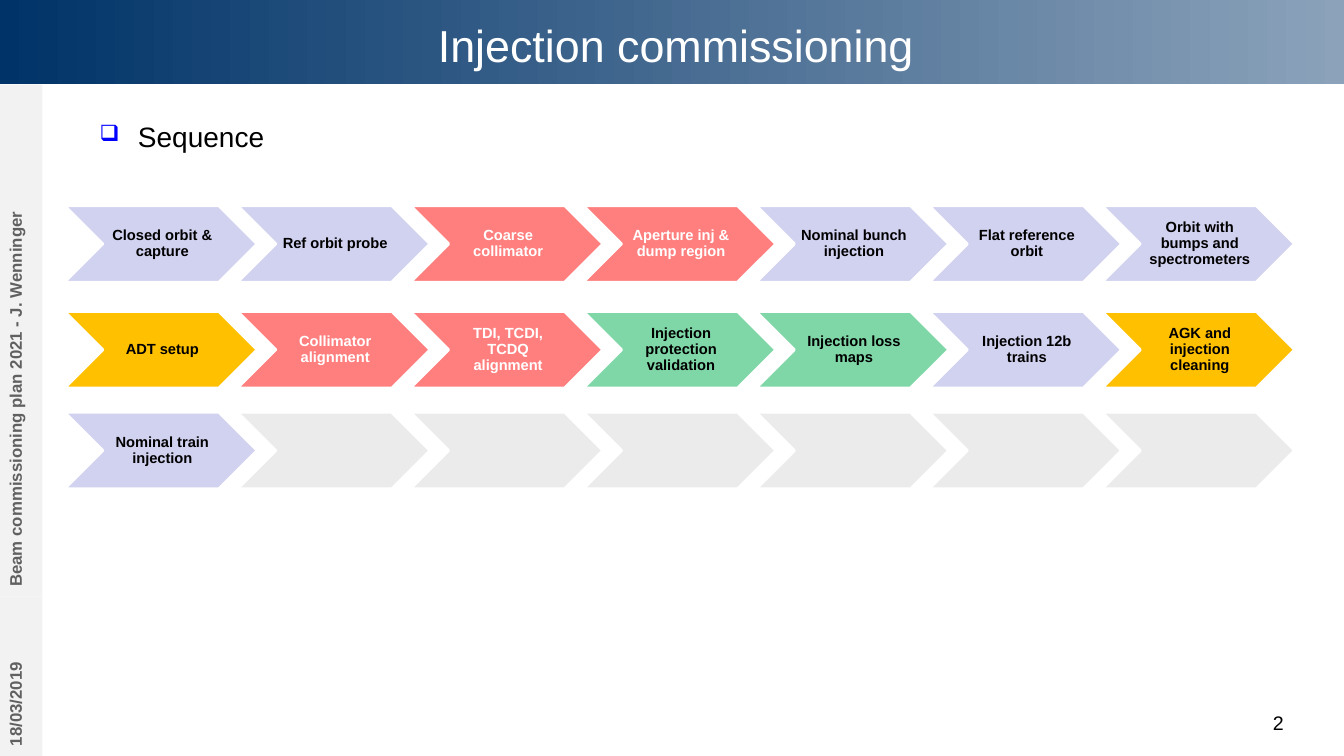
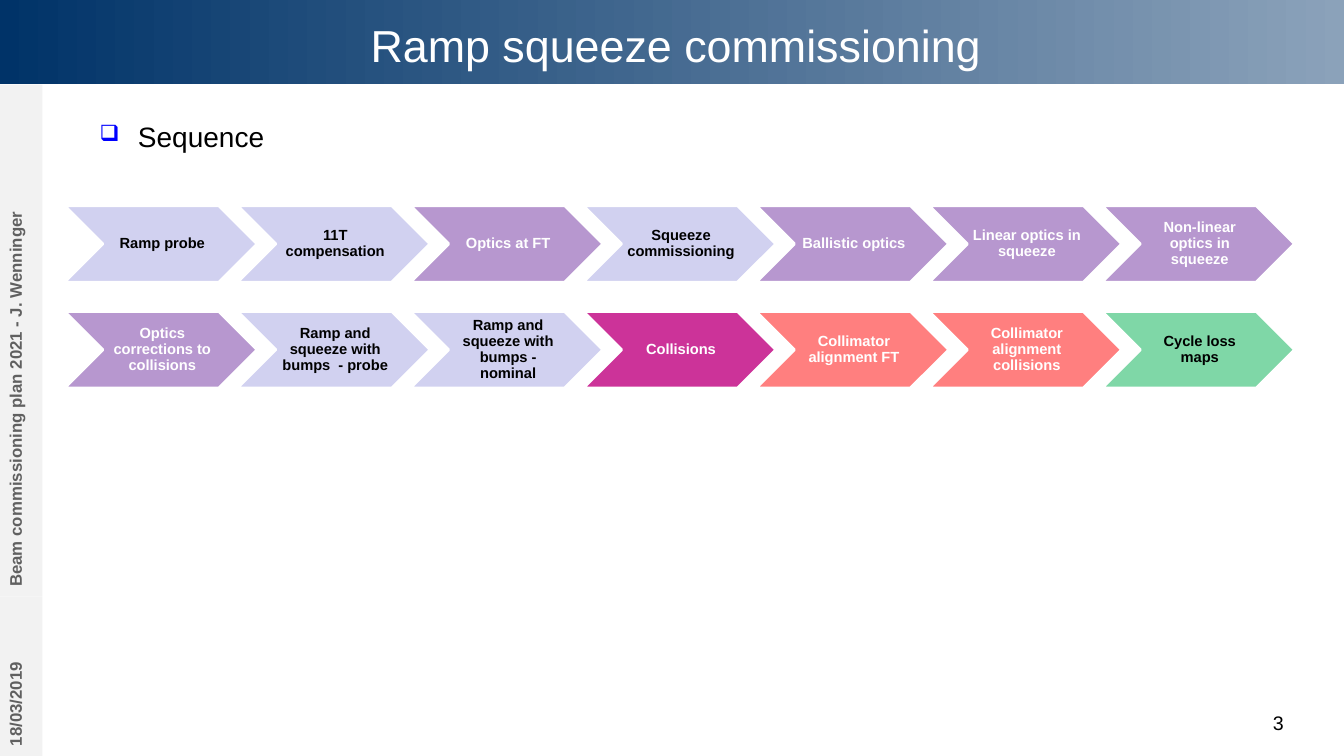
"""Build the two commissioning sequence slides."""
from lxml import etree
from pptx import Presentation
from pptx import util as u
from pptx.dml.color import RGBColor
from pptx.enum import shapes, text
from pptx.oxml.ns import qn

INK = {
    "navy": "003368", "steel": "8BA2BA", "side": "F2F2F2", "foot": "606060",
    "white": "FFFFFF", "black": "000000", "blue": "0000FF",
    "lilac": "D1D1F0", "amber": "FFC000", "pink": "CC3399",
    "red": "FF0000", "green": "00B050", "purple": "7030A0", "grey": "D9D9D9",
}
FADED = {"red", "green", "purple", "grey"}
LIGHT = {"red", "purple", "pink"}
FOOTS = [
    ("18/03/2019", 1.58, 6.71),
    ("Beam commissioning plan 2021 - J. Wenninger", 5.08, 3.38),
]
LEFT, STEP = 0.64, (10.93 - 0.64) / 6
TOPS = [2.04, 3.09, 4.09]
DECK = [
    ("Injection commissioning", [
        [("Closed orbit & capture", "lilac"), ("Ref orbit probe", "lilac"),
         ("Coarse collimator", "red"), ("Aperture inj & dump region", "red"),
         ("Nominal bunch injection", "lilac"),
         ("Flat reference orbit", "lilac"),
         ("Orbit with bumps and spectrometers", "lilac")],
        [("ADT setup", "amber"), ("Collimator alignment", "red"),
         ("TDI, TCDI, TCDQ alignment", "red"),
         ("Injection protection validation", "green"),
         ("Injection loss maps", "green"), ("Injection 12b trains", "lilac"),
         ("AGK and injection cleaning", "amber")],
        [("Nominal train injection", "lilac")] + [("", "grey")] * 6,
    ]),
    ("Ramp squeeze commissioning", [
        [("Ramp probe", "lilac"), ("11T compensation", "lilac"),
         ("Optics at FT", "purple"), ("Squeeze commissioning", "lilac"),
         ("Ballistic optics", "purple"),
         ("Linear optics in squeeze", "purple"),
         ("Non-linear optics in squeeze", "purple")],
        [("Optics corrections to collisions", "purple"),
         ("Ramp and squeeze with bumps  - probe", "lilac"),
         ("Ramp and squeeze with bumps - nominal", "lilac"),
         ("Collisions", "pink"), ("Collimator alignment FT", "red"),
         ("Collimator alignment collisions", "red"),
         ("Cycle loss maps", "green")],
    ]),
]


def write(shape, words, size, ink, align="LEFT", anchor="TOP", bold=False):
    frame = shape.text_frame
    frame.word_wrap = True
    frame.vertical_anchor = getattr(text.MSO_ANCHOR, anchor)
    para = frame.paragraphs[0]
    para.alignment = getattr(text.PP_ALIGN, align)
    run = para.add_run()
    run.text = words
    run.font.name = "Arial"
    run.font.size = u.Pt(size)
    run.font.bold = bold
    run.font.color.rgb = RGBColor.from_string(INK[ink])
    return para


def draw(slide, kind, box, ink):
    shape = slide.shapes.add_shape(kind, *map(u.Inches, box))
    shape.shadow.inherit = False
    shape.line.fill.background()
    shape.fill.solid()
    shape.fill.fore_color.rgb = RGBColor.from_string(INK[ink])
    if ink in FADED:
        clr = shape._element.spPr.find(qn("a:solidFill"))[0]
        etree.SubElement(clr, qn("a:alpha"), val="50000")
    return shape


deck = Presentation()
deck.slide_width = u.Inches(13.33)
deck.slide_height = u.Inches(7.5)

for page, (title, rows) in enumerate(DECK, 2):
    slide = deck.slides.add_slide(deck.slide_layouts[6])

    band = draw(slide, shapes.MSO_SHAPE.RECTANGLE, (0, 0, 13.33, 0.83), "navy")
    band.fill.gradient()
    band.fill.gradient_angle = 0
    for stop, ink in zip(band.fill.gradient_stops, ("navy", "steel")):
        stop.color.rgb = RGBColor.from_string(INK[ink])

    head = slide.shapes.add_textbox(*map(u.Inches, (1.08, 0, 11.25, 0.88)))
    write(head, title, 32, "white", "CENTER", "MIDDLE")

    for words, span, mid in FOOTS:
        box = (0.21 - span / 2, mid - 0.21, span, 0.42)
        foot = draw(slide, shapes.MSO_SHAPE.RECTANGLE, box, "side")
        foot.rotation = 270
        write(foot, words, 12, "foot", bold=True)

    num = slide.shapes.add_textbox(*map(u.Inches, (12.08, 7, 0.75, 0.35)))
    write(num, str(page), 14, "black", "RIGHT")

    body = slide.shapes.add_textbox(*map(u.Inches, (0.89, 1.14, 12.17, 0.5)))
    para = write(body, "Sequence", 20, "black")
    props = para._p.get_or_add_pPr()
    props.set("marL", str(u.Inches(0.38)))
    props.set("indent", str(u.Inches(-0.38)))
    tint = etree.SubElement(props, qn("a:buClr"))
    etree.SubElement(tint, qn("a:srgbClr"), val=INK["blue"])
    etree.SubElement(props, qn("a:buSzPct"), val="80000")
    etree.SubElement(props, qn("a:buChar"), char="❑")

    for top, row in zip(TOPS, rows):
        for col, (words, ink) in enumerate(row):
            box = (LEFT + col * STEP, top, 1.91, 0.76)
            step = draw(slide, shapes.MSO_SHAPE.CHEVRON, box, ink)
            step.line.color.rgb = RGBColor.from_string(INK["white"])
            step.line.width = u.Pt(2)
            if not words:
                continue
            frame = step.text_frame
            frame.margin_left = u.Inches(0.05)
            frame.margin_right = u.Inches(0.02)
            frame.margin_top = frame.margin_bottom = u.Inches(0.02)
            shade = "white" if ink in LIGHT else "black"
            para = write(step, words, 10.5, shade, "CENTER", "MIDDLE", True)
            para.line_spacing = 0.9

deck.save("out.pptx")
